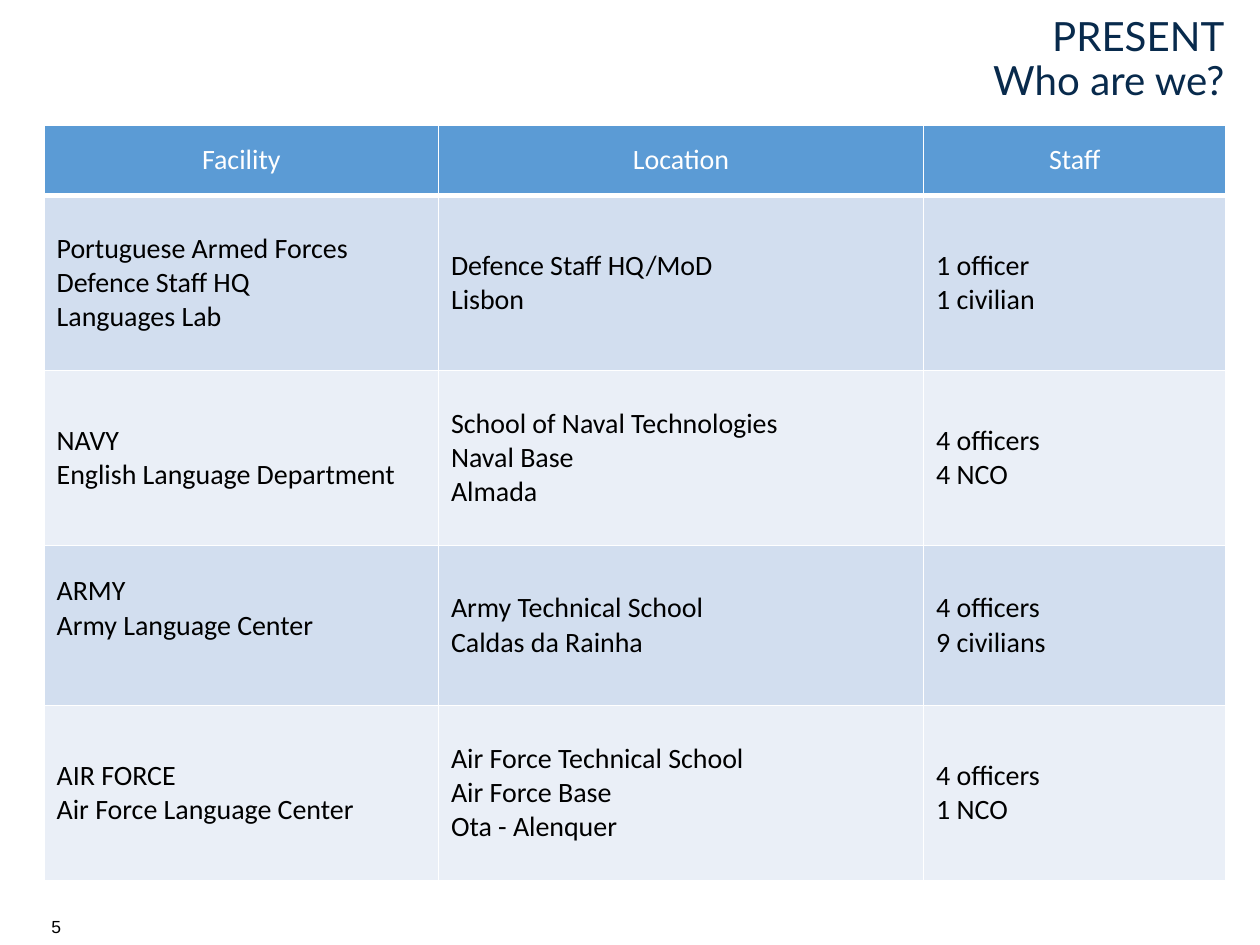
from dataclasses import dataclass

from lxml import etree
from pptx import Presentation
from pptx import util as u
from pptx.dml.color import RGBColor
from pptx.enum import text
from pptx.oxml import ns


@dataclass(frozen=True)
class Theme:
    white: str = "FFFFFF"
    black: str = "000000"
    navy: str = "082A4C"
    header: str = "5B9BD5"
    bands: tuple = ("D2DEEF", "EAEFF7")
    title_font: str = "Lato"
    table_font: str = "Calibri"
    number_font: str = "Arial"
    title_size: int = 23
    table_size: int = 16
    number_size: int = 10


THEME = Theme()
COLUMN_WIDTHS = (3.13, 3.85, 2.4)
ROW_HEIGHTS = (0.56, 1.39, 1.39, 1.27, 1.39)
HEADINGS = ("Facility", "Location", "Staff")
FACILITIES = (
    (("Portuguese Armed Forces Defence Staff HQ", "Languages Lab"),
     ("Defence Staff HQ/MoD", "Lisbon"),
     ("1 officer", "1 civilian")),
    (("NAVY", "English Language Department"),
     ("School of Naval Technologies", "Naval Base", "Almada"),
     ("4 officers", "4 NCO")),
    (("ARMY", "Army Language Center"),
     ("Army Technical School", "Caldas da Rainha"),
     ("4 officers", "9 civilians")),
    (("AIR FORCE", "Air Force Language Center"),
     ("Air Force Technical School", "Air Force Base", "Ota - Alenquer"),
     ("4 officers", "1 NCO")),
)
ARMY_ROW = 3


def write_lines(frame, lines, font, size, color, align=None, spacing=None):
    frame.word_wrap = True
    for index, line in enumerate(lines):
        paragraph = frame.add_paragraph() if index else frame.paragraphs[0]
        paragraph.alignment = align
        paragraph.line_spacing = spacing
        run = paragraph.add_run()
        run.text = line
        run.font.name = font
        run.font.size = u.Pt(size)
        run.font.bold = False
        run.font.color.rgb = RGBColor.from_string(color)


def add_title(slide, box):
    frame = slide.shapes.add_textbox(*box).text_frame
    frame.margin_right = u.Inches(0.28)
    frame.vertical_anchor = text.MSO_ANCHOR.MIDDLE
    write_lines(frame, ("PRESENT", "Who are we?"), THEME.title_font,
                THEME.title_size, THEME.navy, text.PP_ALIGN.RIGHT, 0.9)


def add_page_number(slide, box):
    frame = slide.shapes.add_textbox(*box).text_frame
    write_lines(frame, ("5",), THEME.number_font, THEME.number_size, THEME.black)


def set_borders(cell, bottom_width):
    properties = cell._tc.get_or_add_tcPr()
    widths = {"lnL": 1, "lnR": 1, "lnT": 1, "lnB": bottom_width}
    for index, (side, width) in enumerate(widths.items()):
        line = etree.Element(ns.qn(f"a:{side}"), w=str(u.Pt(width)))
        fill = etree.SubElement(line, ns.qn("a:solidFill"))
        etree.SubElement(fill, ns.qn("a:srgbClr"), val=THEME.white)
        properties.insert(index, line)


def fill_cell(cell, lines, fill, color, align=None, bottom_width=1):
    cell.fill.solid()
    cell.fill.fore_color.rgb = RGBColor.from_string(fill)
    cell.vertical_anchor = text.MSO_ANCHOR.MIDDLE
    set_borders(cell, bottom_width)
    write_lines(cell.text_frame, lines, THEME.table_font, THEME.table_size,
                color, align)


def add_facilities_table(slide, box):
    rows, columns = len(ROW_HEIGHTS), len(COLUMN_WIDTHS)
    table = slide.shapes.add_table(rows, columns, *box).table
    table.horz_banding = False
    for column, width in zip(table.columns, COLUMN_WIDTHS):
        column.width = u.Inches(width)
    for row, height in zip(table.rows, ROW_HEIGHTS):
        row.height = u.Inches(height)
    for column, heading in enumerate(HEADINGS):
        fill_cell(table.cell(0, column), (heading,), THEME.header, THEME.white,
                  text.PP_ALIGN.CENTER, bottom_width=3)
    for row, facility in enumerate(FACILITIES, start=1):
        band = THEME.bands[(row - 1) % 2]
        for column, lines in enumerate(facility):
            fill_cell(table.cell(row, column), lines, band, THEME.black)
    table.cell(ARMY_ROW, 0).margin_bottom = u.Inches(0.32)


def inches(*lengths):
    return tuple(u.Inches(length) for length in lengths)


def main():
    presentation = Presentation()
    presentation.slide_width, presentation.slide_height = inches(10, 7.5)
    slide = presentation.slides.add_slide(presentation.slide_layouts[6])
    add_page_number(slide, inches(0.31, 7.22, 0.51, 0.27))
    add_title(slide, inches(0, 0, 10, 0.96))
    add_facilities_table(slide, inches(0.35, 0.99, 9.38, 5.98))
    presentation.save("out.pptx")


if __name__ == "__main__":
    main()
